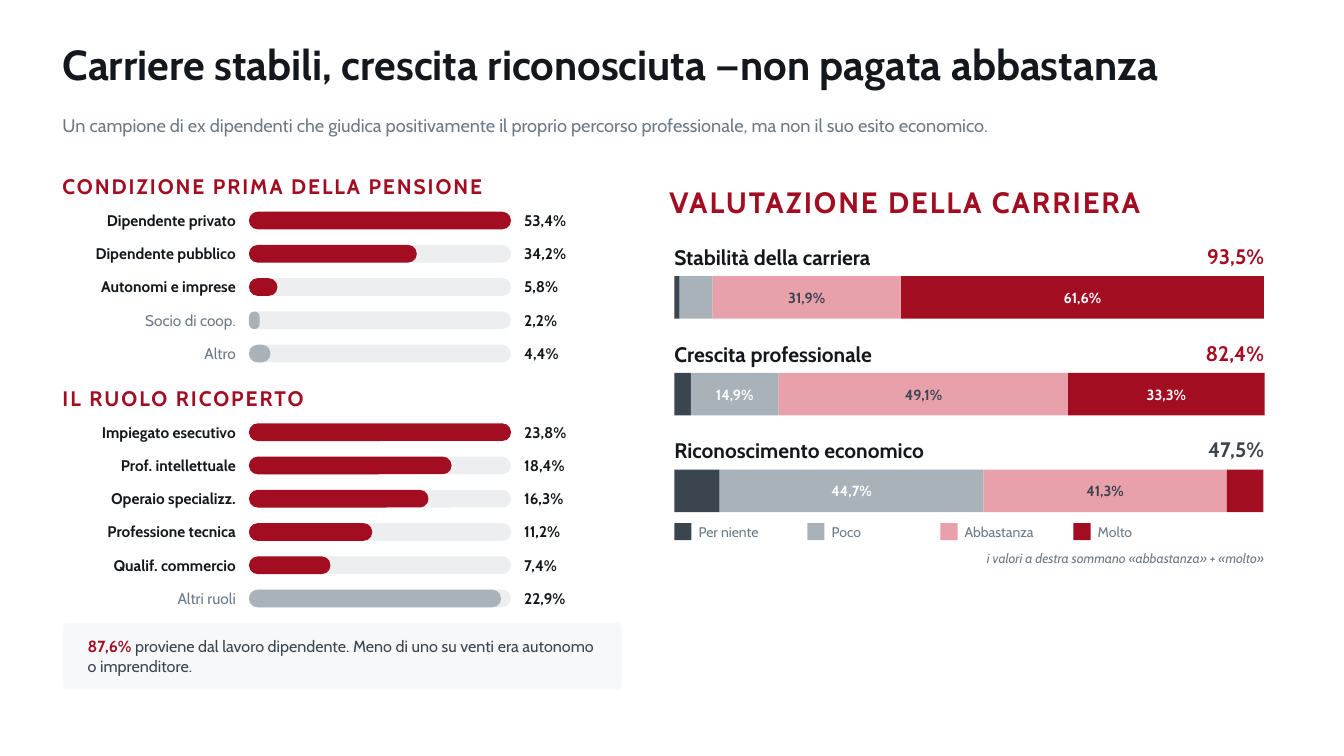
from pptx import Presentation
from pptx.dml.color import RGBColor
from pptx.enum.shapes import MSO_SHAPE as SHAPE
from pptx.enum.text import MSO_ANCHOR as ANCHOR, PP_ALIGN as ALIGN
from pptx.util import Pt

FONT = "Cabin"
RED, PINK, GREY, SLATE = "A30D22", "E8A0AA", "A9B2B9", "3A454F"
INK, MUTED, TRACK, PANEL, WHITE = "14181C", "6B7A87", "ECEEF0", "F7F8F9", "FFFFFF"

# Answer, segment colour, label colour
ANSWERS = [
    ("Per niente", SLATE, WHITE),
    ("Poco", GREY, WHITE),
    ("Abbastanza", PINK, SLATE),
    ("Molto", RED, WHITE),
]
# Label, value, highlighted
CONDITIONS = [
    ("Dipendente privato", 53.4, True),
    ("Dipendente pubblico", 34.2, True),
    ("Autonomi e imprese", 5.8, True),
    ("Socio di coop.", 2.2, False),
    ("Altro", 4.4, False),
]
ROLES = [
    ("Impiegato esecutivo", 23.8, True),
    ("Prof. intellettuale", 18.4, True),
    ("Operaio specializz.", 16.3, True),
    ("Professione tecnica", 11.2, True),
    ("Qualif. commercio", 7.4, True),
    ("Altri ruoli", 22.9, False),
]
RATINGS = [
    ("Stabilità della carriera", (0.9, 5.6, 31.9, 61.6)),
    ("Crescita professionale", (2.8, 14.9, 49.1, 33.3)),
    ("Riconoscimento economico", (7.7, 44.7, 41.3, 6.2)),
]


def rgb(color):
    return RGBColor.from_string(color)


def percent(value):
    return f"{value:.1f}%".replace(".", ",")


def add_run(p, text, size, color, bold=False, italic=False, spacing=0):
    r = p.add_run()
    r.text = text
    r.font.name, r.font.size = FONT, Pt(size)
    r.font.bold, r.font.italic = bold, italic
    r.font.color.rgb = rgb(color)
    if spacing:
        r._r.get_or_add_rPr().set("spc", str(round(spacing * 100)))


def prepare(sp, align=ALIGN.LEFT):
    """Set up a frame without margins and return its first paragraph."""
    tf = sp.text_frame
    tf.word_wrap = True
    tf.vertical_anchor = ANCHOR.MIDDLE
    tf.margin_left = tf.margin_right = tf.margin_top = tf.margin_bottom = 0
    p = tf.paragraphs[0]
    p.alignment = align
    return p


def add_box(s, x, y, w, h, align=ALIGN.LEFT):
    return prepare(s.shapes.add_textbox(Pt(x), Pt(y), Pt(w), Pt(h)), align)


def add_block(s, x, y, w, h, color, radius=None):
    kind = SHAPE.RECTANGLE if radius is None else SHAPE.ROUNDED_RECTANGLE
    sp = s.shapes.add_shape(kind, Pt(x), Pt(y), Pt(w), Pt(h))
    if radius is not None:
        sp.adjustments[0] = radius
    sp.shadow.inherit = False
    sp.fill.solid()
    sp.fill.fore_color.rgb = rgb(color)
    sp.line.fill.background()
    return sp


def add_header(s, x, y, w):
    add_run(add_box(s, x, y, w, 39.6),
            "Carriere stabili, crescita riconosciuta —non pagata abbastanza", 30, INK, bold=True)
    p = add_box(s, x, y + 44.64, w, 36)
    p.line_spacing = Pt(17)
    add_run(p, "Un campione di ex dipendenti che giudica positivamente il proprio "
               "percorso professionale, ma non il suo esito economico.", 13, MUTED)


def add_ranking(s, x, y, w, title, rows):
    row_h, bar_h, bar_w = 23.76, 12.6, 187.2
    bar_x, value_x = x + 133.2, x + 329.76
    add_run(add_box(s, x, y, w, 18.72), title, 15, RED, bold=True, spacing=1.4)
    top = max(value for _, value, _ in rows)
    for i, (label, value, strong) in enumerate(rows):
        row_y = y + 21.6 + i * row_h
        bar_y = row_y + 5.76
        add_run(add_box(s, x, row_y, 123.84, row_h, ALIGN.RIGHT),
                label, 11, INK if strong else MUTED, bold=strong)
        if value < top:
            add_block(s, bar_x, bar_y, bar_w, bar_h, TRACK, 0.49)
        add_block(s, bar_x, bar_y, bar_w * value / top, bar_h, RED if strong else GREY, 0.49)
        add_run(add_box(s, value_x, row_y, 57.6, row_h), percent(value), 11, INK, bold=True)


def add_callout(s, x, y, w, h):
    add_block(s, x, y, w, h, PANEL, 0.08)
    p = add_box(s, x + 18, y, w - 36, h)
    p.line_spacing = Pt(14)
    add_run(p, "87,6% ", 11.5, RED, bold=True)
    add_run(p, "proviene dal lavoro dipendente. Meno di uno su venti era autonomo "
               "o imprenditore.", 11.5, SLATE)


def add_rating(s, x, y, w, label, values):
    positive = sum(values[2:])
    add_run(add_box(s, x, y, 302.4, 18.72), label, 15, INK, bold=True)
    add_run(add_box(s, x + w - 115.2, y - 2.16, 115.2, 21.6, ALIGN.RIGHT),
            percent(positive), 15, RED if positive > 50 else SLATE, bold=True)
    # Stacked bar; only wide segments carry a value
    seg_x = x
    for value, (_, fill, color) in zip(values, ANSWERS):
        seg_w = w * value / 100
        sp = add_block(s, seg_x, y + 23.04, seg_w, 30.24, fill)
        if value > 10:
            add_run(prepare(sp, ALIGN.CENTER), percent(value), 10.5, color, bold=True)
        seg_x += seg_w


def add_legend(s, x, y, w):
    for i, (name, fill, _) in enumerate(ANSWERS):
        key_x = x + i * 95.04
        add_block(s, key_x, y + 3.6, 12.24, 12.24, fill)
        add_run(add_box(s, key_x + 17.28, y, 82.8, 20.16), name, 10, MUTED)
    add_run(add_box(s, x, y + 20.16, w, 17.28, ALIGN.RIGHT),
            "i valori a destra sommano «abbastanza» + «molto»", 9.5, MUTED, italic=True)


def add_ratings(s, x, y, w):
    add_run(add_box(s, x - 3.6, y, w + 3.6, 18.72),
            "VALUTAZIONE DELLA CARRIERA", 21, RED, bold=True, spacing=1.4)
    for i, (label, values) in enumerate(RATINGS):
        add_rating(s, x, y + 39.6 + i * 69.12, w, label, values)
    add_legend(s, x, y + 235.44, w)


def main():
    prs = Presentation()
    prs.slide_width, prs.slide_height = Pt(960), Pt(540)
    s = prs.slides.add_slide(prs.slide_layouts[6])
    left = 44.64
    add_header(s, left, 25.92, 871.2)
    # Left column
    add_ranking(s, left, 123.84, 403.2, "CONDIZIONE PRIMA DELLA PENSIONE", CONDITIONS)
    add_ranking(s, left, 275.04, 403.2, "IL RUOLO RICOPERTO", ROLES)
    add_callout(s, left, 444.96, 399.6, 47.52)
    # Right column
    add_ratings(s, 481.68, 134.64, 421.2)
    prs.save("out.pptx")


if __name__ == "__main__":
    main()
